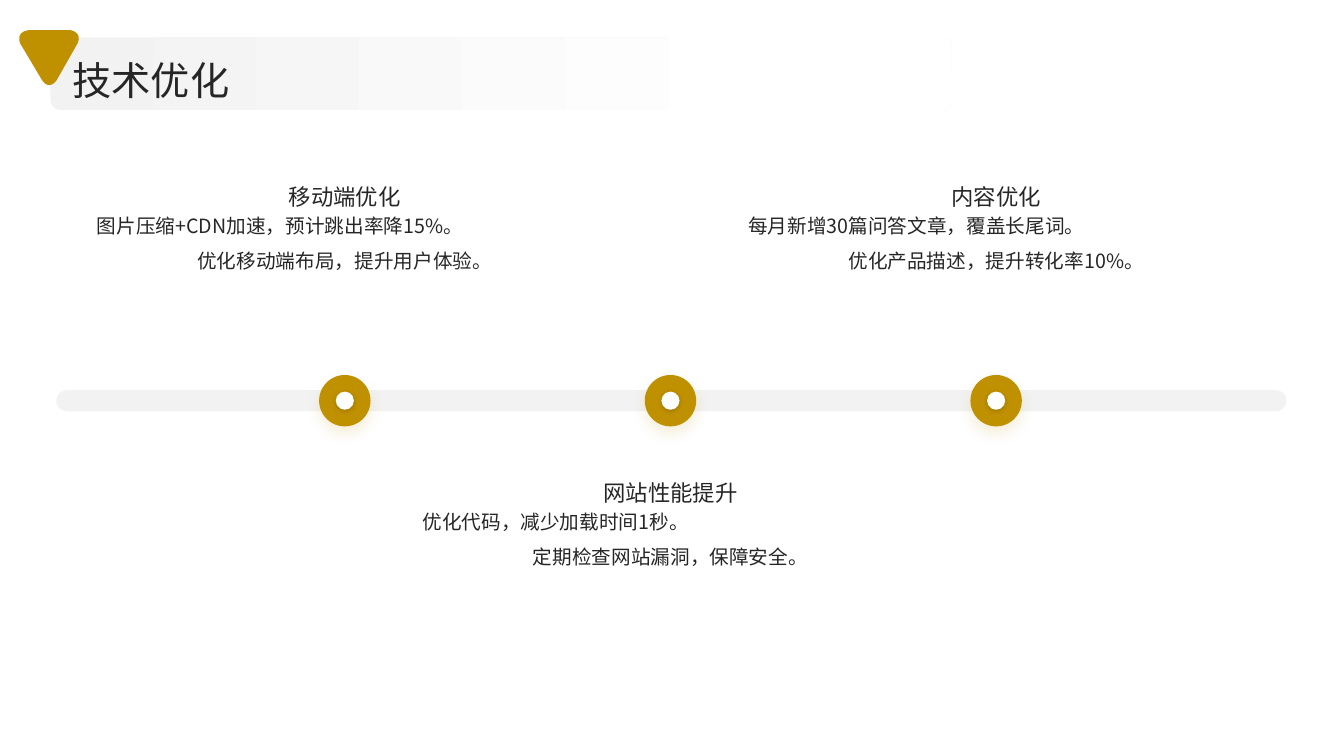
from lxml.etree import SubElement
from pptx import Presentation
from pptx.dml.color import RGBColor
from pptx.enum.shapes import MSO_SHAPE
from pptx.enum.text import MSO_ANCHOR, MSO_AUTO_SIZE, PP_ALIGN
from pptx.oxml.ns import qn
from pptx.util import Inches, Pt

GOLD = RGBColor(0xBF, 0x90, 0x00)
GREY = RGBColor(0xF2, 0xF2, 0xF2)
INK = RGBColor(0x26, 0x26, 0x26)
WHITE = RGBColor(0xFF, 0xFF, 0xFF)
BLACK = RGBColor(0x00, 0x00, 0x00)
FONT = "Noto Sans CJK SC"

TRACK_LEFT, TRACK_TOP, TRACK_WIDTH, TRACK_HEIGHT = 0.56, 3.87, 12.2, 0.21
FIRST_STEP_X, STEP_GAP = 3.42, 3.23
STEP_WIDTH = 4.92
ABOVE_TOP, BELOW_TOP = 1.5, 4.44

STEPS = [
    ("移动端优化", ["图片压缩+CDN加速，预计跳出率降15%。", "优化移动端布局，提升用户体验。"]),
    ("网站性能提升", ["优化代码，减少加载时间1秒。", "定期检查网站漏洞，保障安全。"]),
    ("内容优化", ["每月新增30篇问答文章，覆盖长尾词。", "优化产品描述，提升转化率10%。"]),
]


def add_plain_shape(slide, kind, left, top, width, height, color):
    shape = slide.shapes.add_shape(
        kind, Inches(left), Inches(top), Inches(width), Inches(height))
    paint(shape, color)
    return shape


def paint(shape, color):
    shape.shadow.inherit = False
    shape.fill.solid()
    shape.fill.fore_color.rgb = color
    shape.line.fill.background()


def add_soft_shadow(shape, color, blur, distance):
    """Cast a 15 % shadow straight down; blur and distance are in points."""
    effects = shape._element.spPr.find(qn("a:effectLst"))
    shadow = SubElement(effects, qn("a:outerShdw"), blurRad=str(Pt(blur)),
                        dist=str(Pt(distance)), dir="5400000", algn="t", rotWithShape="0")
    tint = SubElement(shadow, qn("a:srgbClr"), val=str(color))
    SubElement(tint, qn("a:alpha"), val="15000")


def prepare_frame(frame, anchor):
    frame.word_wrap = True
    frame.auto_size = MSO_AUTO_SIZE.NONE
    frame.vertical_anchor = anchor
    frame.margin_left = frame.margin_right = 0
    frame.margin_top = frame.margin_bottom = 0


def write_line(paragraph, text, size, align, spacing):
    paragraph.alignment = align
    paragraph.line_spacing = spacing
    paragraph.space_before = Pt(0)
    run = paragraph.add_run()
    run.text = text
    run.font.size = Pt(size)
    run.font.name = FONT
    run.font.color.rgb = INK
    SubElement(run._r.get_or_add_rPr(), qn("a:ea"), typeface=FONT)


def add_text_frame(slide, left, top, width, height, anchor):
    box = slide.shapes.add_textbox(
        Inches(left), Inches(top), Inches(width), Inches(height))
    prepare_frame(box.text_frame, anchor)
    return box.text_frame


def curve_points(start, control1, control2, end, pieces=8):
    """Points along a cubic curve, without its start."""
    for i in range(1, pieces + 1):
        t = i / pieces
        weights = ((1 - t) ** 3, 3 * t * (1 - t) ** 2, 3 * t * t * (1 - t), t ** 3)
        yield tuple(sum(w * p[axis] for w, p in zip(weights, (start, control1, control2, end)))
                    for axis in (0, 1))


def add_rounded_triangle(slide, left, top):
    corners = [
        ((0.55, 0), (0.67, 0.02), (0.62, 0.13)),
        ((0.41, 0.5), (0.34, 0.6), (0.27, 0.5)),
        ((0.05, 0.13), (0, 0.02), (0.13, 0)),
    ]
    outline = []
    for start, control, end in corners:
        outline.append(start)
        outline.extend(curve_points(start, start, control, end))
    outline = [(Inches(left + x), Inches(top + y)) for x, y in outline]
    builder = slide.shapes.build_freeform(*outline[0])
    builder.add_line_segments(outline[1:], close=True)
    paint(builder.convert_to_shape(), GOLD)


def add_header(slide, left, top, width, height, text):
    bar = add_plain_shape(slide, MSO_SHAPE.ROUNDED_RECTANGLE, left, top, width, height, GREY)
    bar.adjustments[0] = 0.14
    bar.fill.gradient()
    bar.fill.gradient_angle = 0
    for stop, position, color in zip(bar.fill.gradient_stops, (0, 0.8), (GREY, WHITE)):
        stop.position = position
        stop.color.rgb = color

    title = slide.shapes.title
    title.left, title.top = Inches(left + 0.22), Inches(top + 0.14)
    title.width, title.height = Inches(11.67), Inches(0.51)
    prepare_frame(title.text_frame, MSO_ANCHOR.MIDDLE)
    write_line(title.text_frame.paragraphs[0], text, 28, PP_ALIGN.LEFT, 1.1)
    bar._element.addnext(title._element)  # the title stands in front of its bar
    add_rounded_triangle(slide, left - 0.35, top - 0.07)


def add_marker(slide, center_x, center_y):
    for size, color, shade, blur, distance in (
            (0.51, GOLD, GOLD, 10, 5), (0.18, WHITE, BLACK, 3, 1)):
        dot = add_plain_shape(slide, MSO_SHAPE.OVAL, center_x - size / 2,
                              center_y - size / 2, size, size, color)
        add_soft_shadow(dot, shade, blur, distance)


def add_step_text(slide, left, top, width, heading, details):
    frame = add_text_frame(slide, left, top, width, 0.58, MSO_ANCHOR.BOTTOM)
    write_line(frame.paragraphs[0], heading, 16, PP_ALIGN.CENTER, 1.3)
    frame = add_text_frame(slide, left, top + 0.62, width, 1.38, MSO_ANCHOR.TOP)
    write_line(frame.paragraphs[0], details[0], 14, PP_ALIGN.LEFT, 1.0)
    write_line(frame.add_paragraph(), details[1], 14, PP_ALIGN.CENTER, 1.5)


def add_timeline(slide, left, top, width, height):
    track = add_plain_shape(slide, MSO_SHAPE.ROUNDED_RECTANGLE, left, top, width, height, GREY)
    track.adjustments[0] = 0.5
    for i, (heading, details) in enumerate(STEPS):
        center_x = FIRST_STEP_X + i * STEP_GAP
        text_top = BELOW_TOP if i % 2 else ABOVE_TOP
        add_step_text(slide, center_x - STEP_WIDTH / 2, text_top, STEP_WIDTH, heading, details)
        add_marker(slide, center_x, top + height / 2)


def main():
    deck = Presentation()
    deck.slide_width, deck.slide_height = Inches(13.33), Inches(7.5)
    slide = deck.slides.add_slide(deck.slide_layouts[5])
    add_timeline(slide, TRACK_LEFT, TRACK_TOP, TRACK_WIDTH, TRACK_HEIGHT)
    add_header(slide, 0.5, 0.37, 8.94, 0.72, "技术优化")
    deck.save("out.pptx")


if __name__ == "__main__":
    main()
